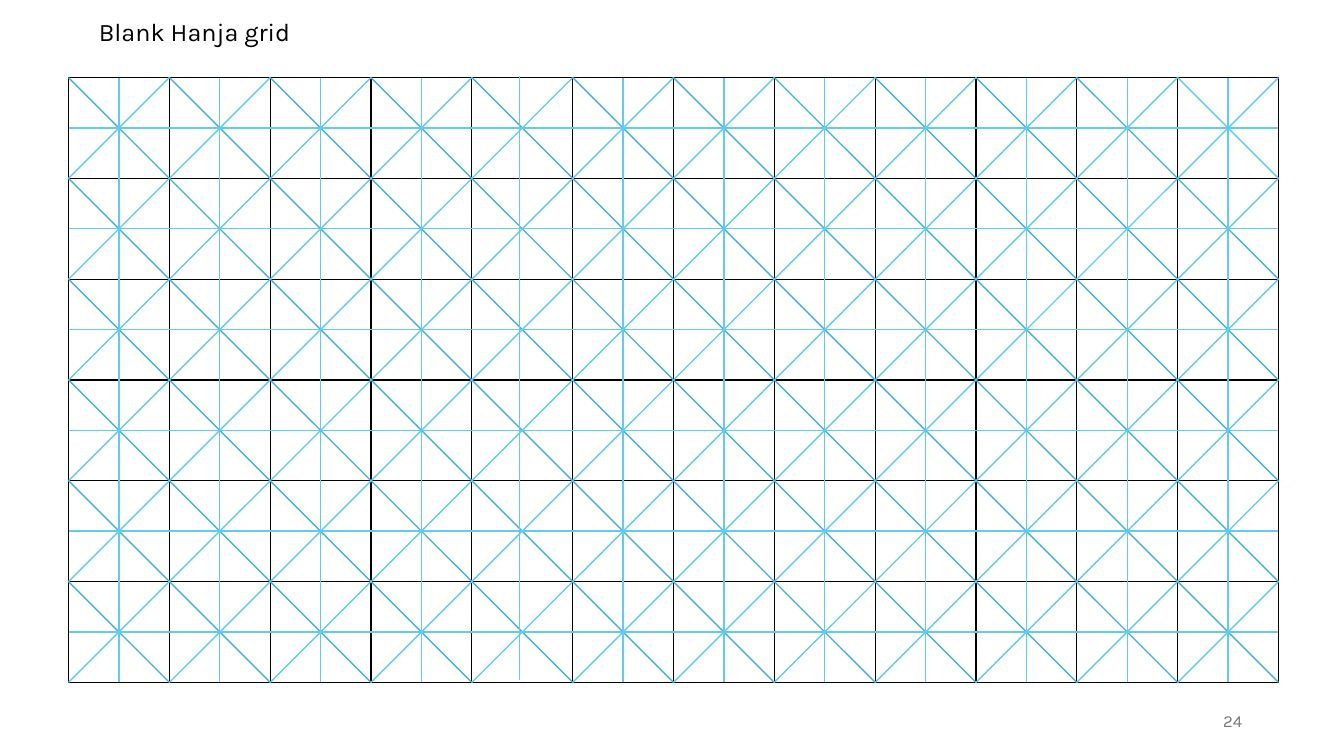
"""Build a blank Hanja practice grid slide."""
from dataclasses import dataclass
from lxml import etree
from pptx import Presentation
from pptx import util as u
from pptx.dml import color
from pptx.enum import shapes, text
from pptx.oxml import ns, xmlchemy

SCALE = 9144
LEFT, TOP, CELL = 68, 77, 100
COLS, ROWS = 12, 6
HALF = CELL // 2
RIGHT, BASE = LEFT + COLS * CELL, TOP + ROWS * CELL
NUDGE = {4: (-3, -2)}


@dataclass(frozen=True)
class Theme:
    """Colours, font and type sizes."""
    ink: str = "000000"
    deep: str = "46B1E1"
    light: str = "61CBF4"
    grey: str = "797979"
    font: str = "Karla"
    head: int = 18
    foot: int = 12
    rule: int = 1


@dataclass(frozen=True)
class Line:
    """A guide line, with its ends in px."""
    x1: int
    y1: int
    x2: int
    y2: int
    tint: str


THEME = Theme()


def px(n: int) -> u.Emu:
    """Turn px into EMU."""
    return u.Emu(n * SCALE)


def rgb(tint: str) -> color.RGBColor:
    """Turn a hex string into a colour."""
    return color.RGBColor.from_string(tint)


def write(shape, words: str, *, box: tuple[int, int, int, int], size: int, tint: str,
          align=text.PP_ALIGN.LEFT, anchor=text.MSO_ANCHOR.TOP) -> None:
    """Place a text shape and fill it with formatted words."""
    shape.left, shape.top, shape.width, shape.height = map(px, box)
    frame = shape.text_frame
    frame.word_wrap = True
    frame.auto_size = text.MSO_AUTO_SIZE.NONE
    frame.vertical_anchor = anchor
    para = frame.paragraphs[0]
    para.alignment = align
    run = para.add_run()
    run.text = words
    run.font.name = THEME.font
    run.font.size = u.Pt(size)
    run.font.color.rgb = rgb(tint)


def edge(cell) -> None:
    """Give a cell a thin border on all four sides."""
    props = cell._tc.get_or_add_tcPr()
    for i, side in enumerate(("lnL", "lnR", "lnT", "lnB")):
        line = xmlchemy.OxmlElement(f"a:{side}")
        line.set("w", str(u.Pt(THEME.rule)))
        fill = etree.SubElement(line, ns.qn("a:solidFill"))
        etree.SubElement(fill, ns.qn("a:srgbClr"), val=THEME.ink)
        props.insert(i, line)


def grid(slide) -> None:
    """Add the table of square cells."""
    table = slide.shapes.add_table(
        ROWS, COLS, px(LEFT), px(TOP), px(COLS * CELL), px(ROWS * CELL)).table
    table.first_row = table.horz_banding = False
    for cell in table.iter_cells():
        cell.fill.background()
        edge(cell)


def slants() -> list[Line]:
    """List the diagonals, falling ones first, then their mirror images."""
    down, up = [], []
    for k in range(1 - ROWS, COLS):
        col, row = max(k, 0), max(-k, 0)
        span = min(COLS - col, ROWS - row) * CELL
        x, y = col * CELL, TOP + row * CELL
        tint = THEME.light if k == COLS - 1 else THEME.deep
        down.append(Line(LEFT + x, y, LEFT + x + span, y + span, tint))
        up.append(Line(RIGHT - x, y, RIGHT - x - span, y + span, THEME.light))
    return down + up


def mids() -> list[Line]:
    """List the lines through the middle of each column and row."""
    lines = []
    for col in range(COLS):
        dx, dy = NUDGE.get(col, (0, 0))
        x = LEFT + HALF + col * CELL + dx
        lines.append(Line(x, TOP + dy, x, BASE + dy, THEME.light))
    for row in range(ROWS):
        y = TOP + HALF + row * CELL
        lines.append(Line(LEFT, y, RIGHT, y, THEME.light))
    return lines


def draw(slide, line: Line) -> None:
    """Draw one guide line without a shadow."""
    link = slide.shapes.add_connector(
        shapes.MSO_CONNECTOR.STRAIGHT, px(line.x1), px(line.y1), px(line.x2), px(line.y2))
    link.line.color.rgb = rgb(line.tint)
    link.line.width = u.Pt(THEME.rule)
    etree.SubElement(link._element.spPr, ns.qn("a:effectLst"))


def main() -> None:
    """Build and save the slide."""
    deck = Presentation()
    deck.slide_width, deck.slide_height = px(1333), px(750)
    slide = deck.slides.add_slide(deck.slide_layouts[5])
    grid(slide)
    for line in slants() + mids():
        draw(slide, line)
    write(slide.shapes.title, "Blank Hanja grid", box=(88, 11, 1162, 40),
          size=THEME.head, tint=THEME.ink)
    note = slide.shapes.add_textbox(0, 0, 0, 0)
    write(note, "24", box=(942, 695, 300, 40), size=THEME.foot, tint=THEME.grey,
          align=text.PP_ALIGN.RIGHT, anchor=text.MSO_ANCHOR.MIDDLE)
    deck.save("out.pptx")


if __name__ == "__main__":
    main()
